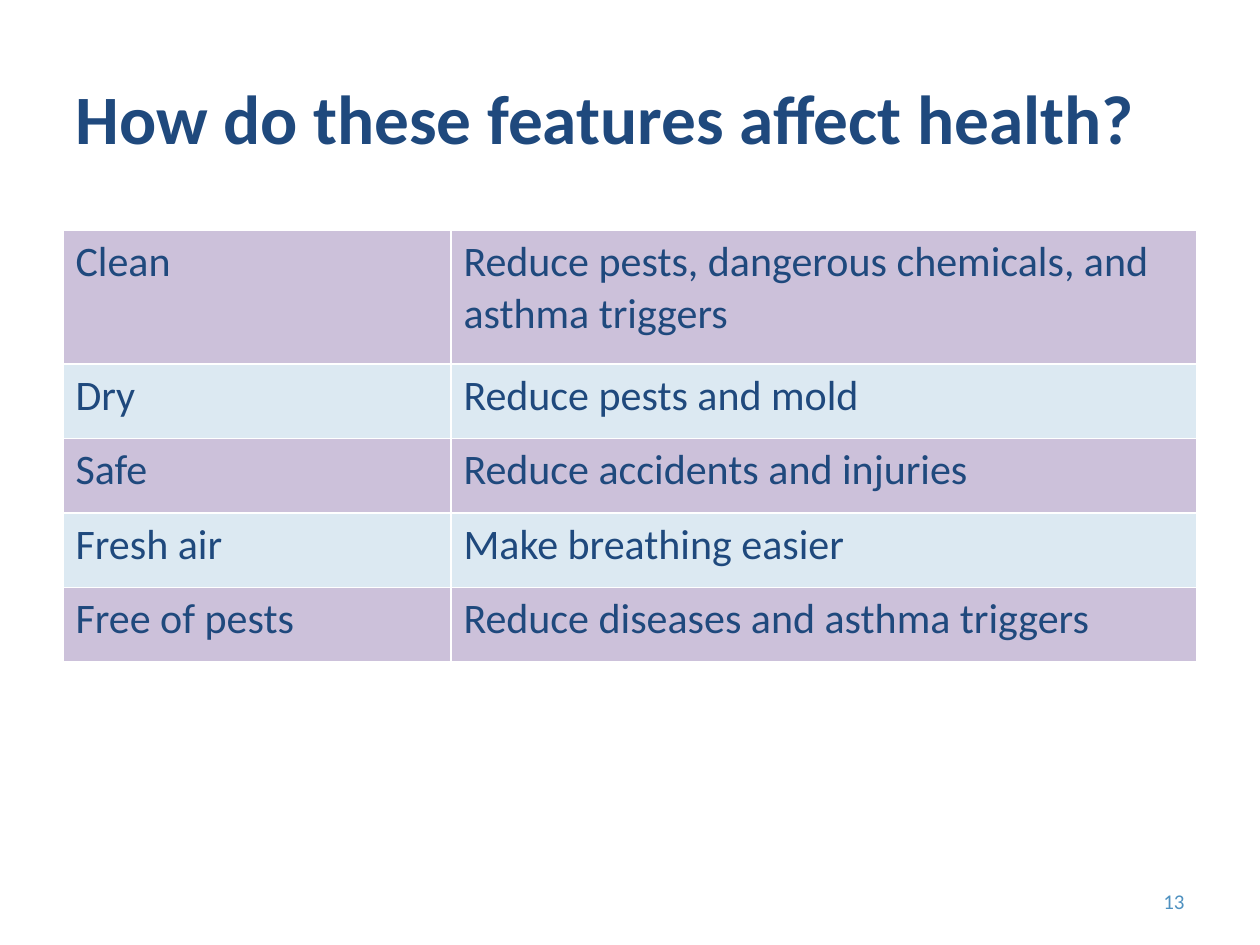
from typing import NamedTuple

from lxml.etree import SubElement
from pptx import Presentation
from pptx.dml.color import RGBColor
from pptx.enum.text import MSO_ANCHOR, PP_ALIGN
from pptx.oxml.ns import qn
from pptx.util import Cm, Pt

NAVY = RGBColor(0x1F, 0x49, 0x7D)
BLUE = RGBColor(0x4F, 0x91, 0xC0)
LILAC = RGBColor(0xCC, 0xC1, 0xDA)
PALE_BLUE = RGBColor(0xDC, 0xE9, 0xF2)
WHITE = RGBColor(0xFF, 0xFF, 0xFF)
FONT = "Calibri"
MARGIN = Cm(1.27)
CONTENT_WIDTH = Cm(22.86)
COLUMN_WIDTHS = (Cm(7.82), Cm(15.04))
FIRST_ROW_HEIGHT = Cm(2.69)
ROW_HEIGHT = Cm(1.5)


class TextStyle(NamedTuple):
    size: float
    color: RGBColor
    bold: bool = False
    align: PP_ALIGN = PP_ALIGN.LEFT


class Feature(NamedTuple):
    name: str
    effect: str


TITLE_STYLE = TextStyle(39.6, NAVY, bold=True)
CELL_STYLE = TextStyle(24, NAVY)
NUMBER_STYLE = TextStyle(12, BLUE, align=PP_ALIGN.RIGHT)

FEATURES = (
    Feature("Clean", "Reduce pests, dangerous chemicals, and asthma triggers"),
    Feature("Dry", "Reduce pests and mold"),
    Feature("Safe", "Reduce accidents and injuries"),
    Feature("Fresh air", "Make breathing easier"),
    Feature("Free of pests", "Reduce diseases and asthma triggers"),
)


def write_text(text_frame, text: str, style: TextStyle) -> None:
    text_frame.text = text
    para = text_frame.paragraphs[0]
    para.alignment = style.align
    font = para.runs[0].font
    font.name = FONT
    font.size = Pt(style.size)
    font.bold = style.bold
    font.color.rgb = style.color


def add_text_box(page, left: Cm, top: Cm, width: Cm, height: Cm,
                 text: str, style: TextStyle) -> None:
    text_frame = page.shapes.add_textbox(left, top, width, height).text_frame
    text_frame.word_wrap = True
    text_frame.vertical_anchor = MSO_ANCHOR.MIDDLE
    write_text(text_frame, text, style)


def add_borders(cell, color: RGBColor, width: Pt) -> None:
    """Line all four sides; call before filling, as the schema orders it."""
    properties = cell._tc.get_or_add_tcPr()
    for side in ("a:lnL", "a:lnR", "a:lnT", "a:lnB"):
        line = SubElement(properties, qn(side), w=str(width))
        fill = SubElement(line, qn("a:solidFill"))
        SubElement(fill, qn("a:srgbClr"), val=str(color))


def add_feature_table(page, features: tuple[Feature, ...]) -> None:
    height = FIRST_ROW_HEIGHT + ROW_HEIGHT * (len(features) - 1)
    table = page.shapes.add_table(len(features), len(COLUMN_WIDTHS), MARGIN,
                                  Cm(4.65), CONTENT_WIDTH, height).table
    table.first_row = False
    table.horz_banding = False
    for column, width in zip(table.columns, COLUMN_WIDTHS):
        column.width = width
    for index, (row, feature) in enumerate(zip(table.rows, features)):
        row.height = ROW_HEIGHT if index else FIRST_ROW_HEIGHT
        for cell, text in zip(row.cells, feature):
            add_borders(cell, WHITE, Pt(1))
            cell.fill.solid()
            cell.fill.fore_color.rgb = PALE_BLUE if index % 2 else LILAC
            write_text(cell.text_frame, text, CELL_STYLE)


def main() -> None:
    deck = Presentation()
    deck.slide_width = Cm(25.4)
    deck.slide_height = Cm(19.05)
    page = deck.slides.add_slide(deck.slide_layouts[6])
    add_text_box(page, MARGIN, Cm(0.76), CONTENT_WIDTH, Cm(3.18),
                 "How do these features affect health?", TITLE_STYLE)
    add_feature_table(page, FEATURES)
    add_text_box(page, Cm(18.2), Cm(17.65), Cm(5.93), Cm(1.02),
                 "13", NUMBER_STYLE)
    deck.save("out.pptx")


if __name__ == "__main__":
    main()
